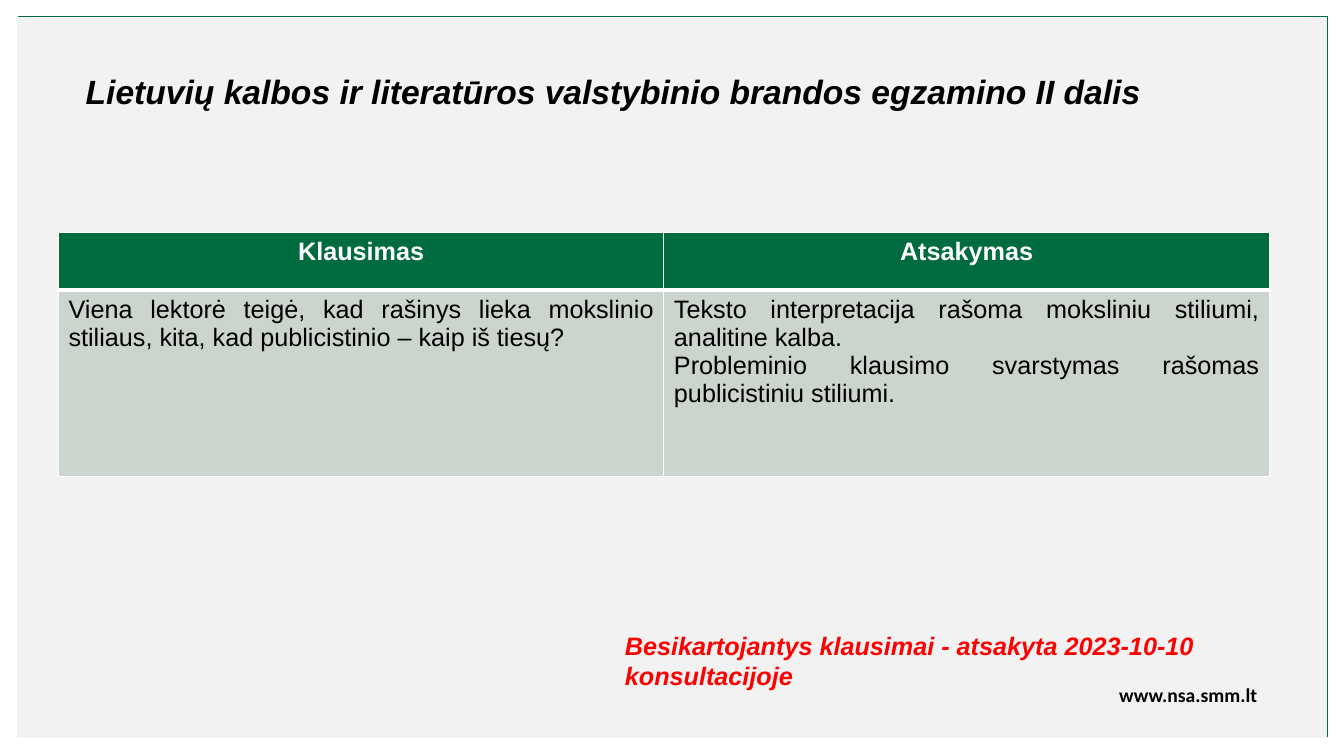
from pptx import Presentation
from pptx.dml.color import RGBColor as RGB
from pptx.enum.shapes import MSO_SHAPE as Shape
from pptx.enum.text import MSO_ANCHOR as Anchor, MSO_AUTO_SIZE as Fit, PP_ALIGN as Align
from pptx.oxml import parse_xml
from pptx.oxml.ns import nsdecls
from pptx.util import Inches, Pt

GREEN = RGB(0x00, 0x6B, 0x3E)
GREY = RGB(0xF2, 0xF2, 0xF2)
SAGE = RGB(0xCC, 0xD4, 0xCE)
WHITE = RGB(0xFF, 0xFF, 0xFF)
BLACK = RGB(0x00, 0x00, 0x00)
RED = RGB(0xFF, 0x00, 0x00)

HEADS = ["Klausimas", "Atsakymas"]
ANSWERS = [
    "Viena lektorė teigė, kad rašinys lieka mokslinio stiliaus, "
    "kita, kad publicistinio – kaip iš tiesų?",
    "Teksto interpretacija rašoma moksliniu stiliumi, analitine kalba.\n"
    "Probleminio klausimo svarstymas rašomas publicistiniu stiliumi.",
]


def write(frame, text, size=18, color=BLACK, bold=False, italic=False,
          align=Align.LEFT, face="Arial"):
    frame.word_wrap = True
    frame.text = text
    for para in frame.paragraphs:
        para.alignment = align
        font = para.runs[0].font
        font.name, font.size = face, Pt(size)
        font.bold, font.italic = bold, italic
        font.color.rgb = color


def panel(slide, left, top, color):
    rect = slide.shapes.add_shape(Shape.RECTANGLE, Inches(left), Inches(top),
                                  Inches(12.99), Inches(7.15))
    rect.shadow.inherit = False
    rect.fill.solid()
    rect.fill.fore_color.rgb = color
    rect.line.fill.background()


def label(slide, text, left, top, width, height, **style):
    box = slide.shapes.add_textbox(Inches(left), Inches(top),
                                   Inches(width), Inches(height))
    write(box.text_frame, text, **style)


def heading(slide, text):
    title = slide.shapes.title
    title.left, title.top = Inches(0.75), Inches(0.65)
    title.width, title.height = Inches(11.19), Inches(0.5)
    write(title.text_frame, text, size=24, bold=True, italic=True)
    title.text_frame.auto_size = Fit.NONE
    title.text_frame.vertical_anchor = Anchor.TOP


def border(cell, **widths):
    props = cell._tc.get_or_add_tcPr()
    for spot, (side, width) in enumerate(widths.items()):
        props.insert(spot, parse_xml(
            f'<a:{side} {nsdecls("a")} w="{Pt(width)}"><a:solidFill>'
            f'<a:srgbClr val="{WHITE}"/></a:solidFill></a:{side}>'))


def grid(slide):
    table = slide.shapes.add_table(2, 2, Inches(0.58), Inches(2.31),
                                   Inches(12.01), Inches(2.42)).table
    table.rows[0].height = Inches(0.57)
    table.rows[1].height = Inches(1.85)
    head = dict(color=WHITE, bold=True, align=Align.CENTER)
    body = dict(align=Align.JUSTIFY)
    rows = [(HEADS, GREEN, head, 1, 3), (ANSWERS, SAGE, body, 3, 1)]
    for row, (texts, fill, style, top, base) in enumerate(rows):
        for col, text in enumerate(texts):
            cell = table.cell(row, col)
            cell.fill.solid()
            cell.fill.fore_color.rgb = fill
            write(cell.text_frame, text, **style)
            border(cell, lnL=1, lnR=1, lnT=top, lnB=base)


def main():
    deck = Presentation()
    deck.slide_width, deck.slide_height = Inches(13.33), Inches(7.5)
    slide = deck.slides.add_slide(deck.slide_layouts[5])

    # Backdrop: the green panel shows as a thin edge
    panel(slide, 0.18, 0.16, GREEN)
    panel(slide, 0.17, 0.17, GREY)
    label(slide, "www.nsa.smm.lt", 9.37, 6.73, 3.2, 0.34, size=14, bold=True,
          align=Align.RIGHT, face="Calibri")

    # Title, moved in front of the backdrop
    heading(slide, "Lietuvių kalbos ir literatūros valstybinio brandos "
                   "egzamino II dalis")
    slide.shapes._spTree.append(slide.shapes.title._element)

    # Question and answer
    grid(slide)

    # Closing remark
    label(slide, "Besikartojantys klausimai - atsakyta 2023-10-10 konsultacijoje",
          6.1, 6.2, 6.67, 0.71, color=RED, bold=True, italic=True)

    deck.save("out.pptx")


if __name__ == "__main__":
    main()
